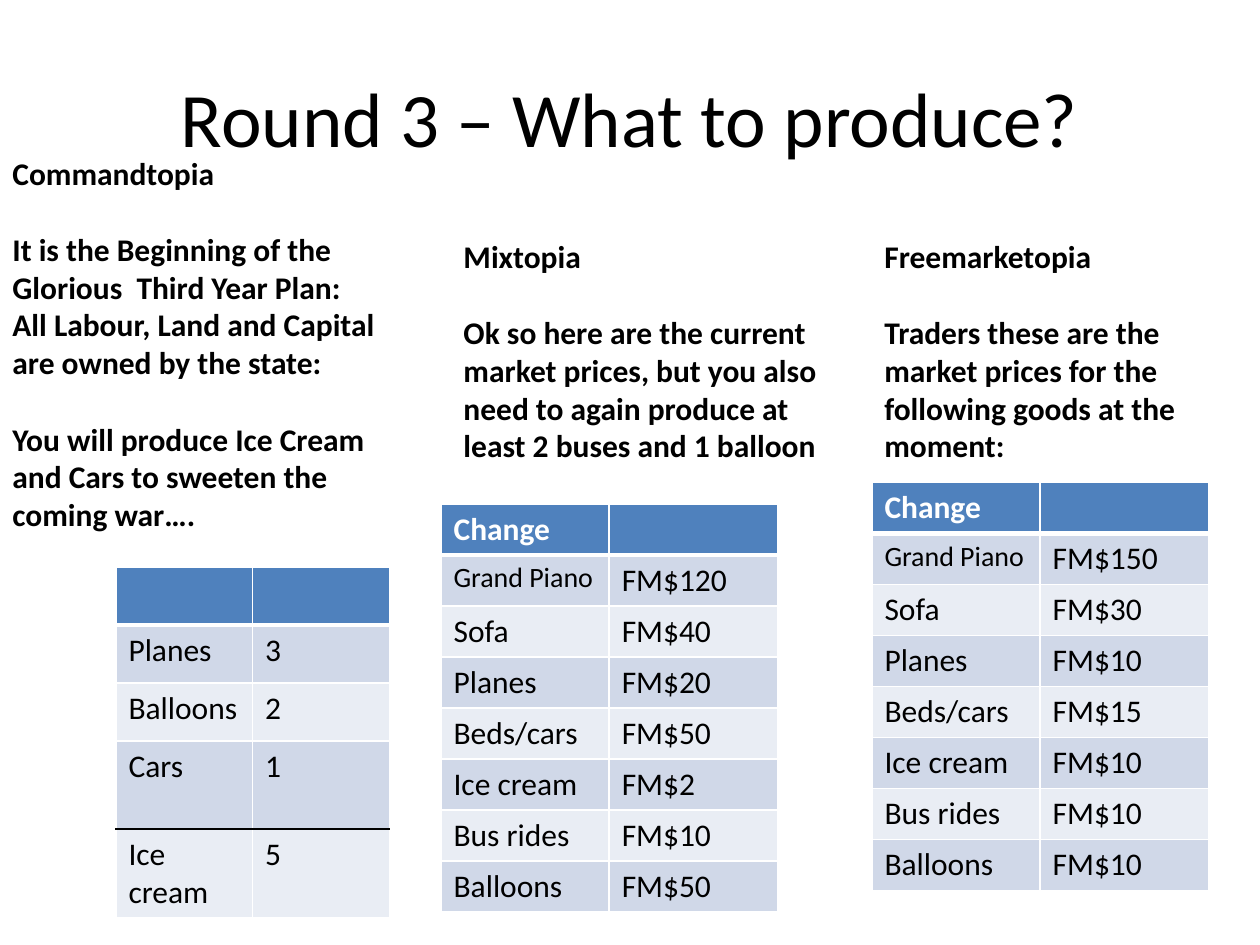
import pptx
import pptx.util
import pptx.dml.color
import pptx.enum.text
from lxml import etree
from pptx.oxml.ns import qn

Inches = pptx.util.Inches
Pt = pptx.util.Pt

INK = {
    "text": "000000",
    "white": "FFFFFF",
    "head": "4F81BD",
    "dark": "D0D8E8",
    "light": "E9EDF4",
}
BODY = {"name": "Calibri", "size": Pt(18), "bold": False}
BOLD = {**BODY, "bold": True}
SMALL = {**BODY, "size": Pt(16)}
TITLE = {**BODY, "size": Pt(44)}

GOODS = ["Grand Piano", "Sofa", "Planes", "Beds/cars",
         "Ice cream", "Bus rides", "Balloons"]

# Each land: text box, paragraphs
LANDS = [
    ((0, 1.17, 3.08, 4.04), [
        "Commandtopia",
        "It is the Beginning of the Glorious  Third Year Plan: "
        "All Labour, Land and Capital are owned by the state:",
        "You will produce Ice Cream and Cars to sweeten the coming war….",
    ]),
    ((3.58, 1.83, 3.08, 3.13), [
        "Mixtopia",
        "Ok so here are the current market prices, but you also need to "
        "again produce at least 2 buses and 1 balloon",
    ]),
    ((6.92, 1.83, 3.08, 2.83), [
        "Freemarketopia",
        "Traders these are the market prices for the following goods "
        "at the moment:",
    ]),
]

PLAN = [("", ""), ("Planes", "3"), ("Balloons", "2"),
        ("Cars", "1"), ("Ice cream", "5")]
PRICES = [
    ((6.92, 3.83, 2.67, 3.24), [150, 30, 10, 15, 10, 10, 10]),
    ((3.5, 4, 2.67, 3.24), [120, 40, 20, 50, 2, 10, 50]),
]


def rgb(key):
    return pptx.dml.color.RGBColor.from_string(INK[key])


def style(font, look, ink="text"):
    for key, val in look.items():
        setattr(font, key, val)
    font.color.rgb = rgb(ink)


def add_title(slide, box, text):
    title = slide.shapes.title
    for key, val in zip(("left", "top", "width", "height"), box):
        setattr(title, key, Inches(val))
    title.text_frame.text = text
    para = title.text_frame.paragraphs[0]
    para.alignment = pptx.enum.text.PP_ALIGN.CENTER
    style(para.runs[0].font, TITLE)


def add_land(slide, box, texts):
    frame = slide.shapes.add_textbox(*map(Inches, box)).text_frame
    frame.word_wrap = True
    for i, text in enumerate(texts):
        para = frame.paragraphs[0] if i == 0 else frame.add_paragraph()
        # One line of space between paragraphs
        para.space_before = Pt(22 if i else 0)
        run = para.add_run()
        run.text = text
        style(run.font, BOLD)


def add_edge(cell, side, ink, width):
    line = etree.SubElement(cell._tc.get_or_add_tcPr(), qn("a:ln" + side),
                            w=str(Pt(width)))
    fill = etree.SubElement(line, qn("a:solidFill"))
    etree.SubElement(fill, qn("a:srgbClr"), val=INK[ink])


def add_grid(slide, box, rows, highs, rule=None):
    """Table with a header row; rule is the row with a dark line above it."""
    frame = slide.shapes.add_table(len(rows), 2, *map(Inches, box))
    table = frame.table
    edges = {1: ("white", 3), rule: ("text", 1)}
    plain = ("white", 1)
    for r, row in enumerate(rows):
        table.rows[r].height = Inches(highs[r])
        back = "head" if r == 0 else "dark" if r % 2 else "light"
        for c, text in enumerate(row):
            cell = table.cell(r, c)
            for side, edge in (("L", plain), ("R", plain),
                               ("T", edges.get(r, plain)),
                               ("B", edges.get(r + 1, plain))):
                add_edge(cell, side, *edge)
            cell.fill.solid()
            cell.fill.fore_color.rgb = rgb(back)
            if text:
                cell.text = text
                look = (BOLD if r == 0 else
                        SMALL if text == "Grand Piano" else BODY)
                style(cell.text_frame.paragraphs[0].runs[0].font, look,
                      "text" if r else "white")


def main():
    deck = pptx.Presentation()
    deck.slide_width, deck.slide_height = Inches(10), Inches(7.5)
    slide = deck.slides.add_slide(deck.slide_layouts[5])

    # Title and the three lands
    add_title(slide, (0.5, 0.3, 9, 1.25), "Round 3 – What to produce?")
    for box, texts in LANDS:
        add_land(slide, box, texts)

    # State plan, then the market prices
    add_grid(slide, (0.92, 4.5, 2.17, 2.77), PLAN,
             [0.46] * 3 + [0.7] * 2, rule=4)
    for box, costs in PRICES:
        rows = [("Change", "")]
        rows += [(good, f"FM${cost}") for good, cost in zip(GOODS, costs)]
        add_grid(slide, box, rows, [box[3] / len(rows)] * len(rows))

    deck.save("out.pptx")


if __name__ == "__main__":
    main()
